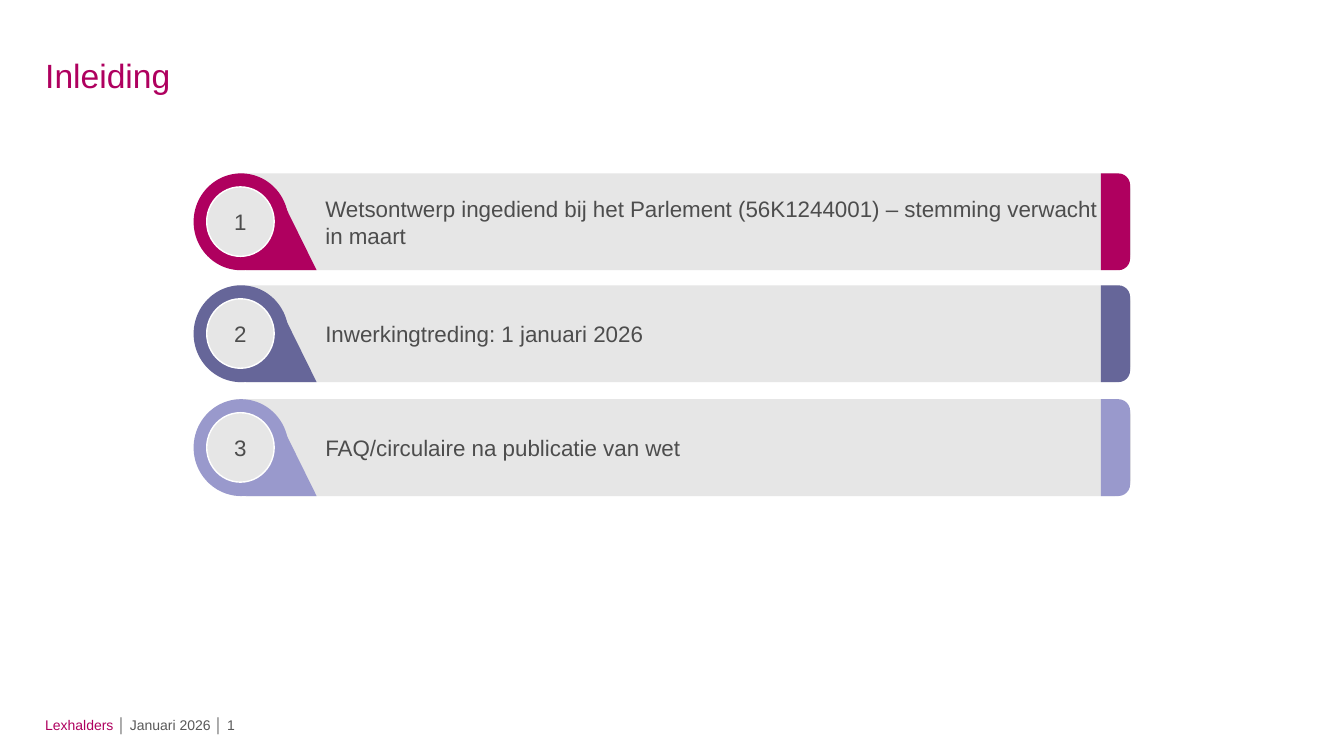
from pptx import Presentation
from pptx.dml.color import RGBColor
from pptx.enum.shapes import MSO_SHAPE
from pptx.enum.text import MSO_ANCHOR, PP_ALIGN
from pptx.util import Cm, Pt

BAR = MSO_SHAPE.ROUNDED_RECTANGLE
DISC = MSO_SHAPE.OVAL
TAIL = MSO_SHAPE.ISOSCELES_TRIANGLE
CAP = MSO_SHAPE.ROUND_2_SAME_RECTANGLE
MIDDLE = MSO_ANCHOR.MIDDLE
LEFT, CENTER = PP_ALIGN.LEFT, PP_ALIGN.CENTER

MAGENTA = RGBColor(0xAF, 0x00, 0x5F)
INDIGO = RGBColor(0x66, 0x66, 0x99)
LAVENDER = RGBColor(0x99, 0x99, 0xCC)
LIGHT_GREY = RGBColor(0xE6, 0xE6, 0xE6)
DARK_GREY = RGBColor(0x4D, 0x4D, 0x4D)
FOOTER_GREY = RGBColor(0x59, 0x59, 0x59)
WHITE = RGBColor(0xFF, 0xFF, 0xFF)

# Content
TITLE = "Inleiding"
FOOTER = [("Lexhalders ", MAGENTA), ("│ Januari 2026 │ 1", FOOTER_GREY)]
# Text, accent colour, top in cm
POINTS = [
    ("Wetsontwerp ingediend bij het Parlement (56K1244001) – stemming verwacht in maart",
     MAGENTA, 4.37),
    ("Inwerkingtreding: 1 januari 2026", INDIGO, 7.19),
    ("FAQ/circulaire na publicatie van wet", LAVENDER, 10.06),
]

# Layout in cm
MARGIN = 1.14
ROW_HEIGHT = 2.44
CAP_WIDTH = 0.74
CAP_CENTER = 28.11

presentation = Presentation()
presentation.slide_width, presentation.slide_height = Cm(33.87), Cm(19.05)
slide = presentation.slides.add_slide(presentation.slide_layouts[6])


def set_insets(frame, left, top, right, bottom):
    frame.margin_left, frame.margin_top = Cm(left), Cm(top)
    frame.margin_right, frame.margin_bottom = Cm(right), Cm(bottom)
    frame.vertical_anchor = MIDDLE


def write(paragraph, pieces, size):
    for text, color in pieces:
        run = paragraph.add_run()
        run.text = text
        run.font.name, run.font.size = "Arial", Pt(size)
        run.font.color.rgb = color


def add_text(left, top, width, height, pieces, size, bottom_inset, wrap):
    box = slide.shapes.add_textbox(Cm(left), Cm(top), Cm(width), Cm(height))
    box.text_frame.word_wrap = wrap
    set_insets(box.text_frame, 0, 0.13, 0.25, bottom_inset)
    write(box.text_frame.paragraphs[0], pieces, size)


def add_part(kind, left, top, width, height, fill):
    part = slide.shapes.add_shape(kind, Cm(left), Cm(top), Cm(width), Cm(height))
    part.shadow.inherit = False
    part.fill.solid()
    part.fill.fore_color.rgb = fill
    part.line.fill.background()
    return part


def label(part, text, align):
    paragraph = part.text_frame.paragraphs[0]
    paragraph.alignment = align
    write(paragraph, [(text, DARK_GREY)], 16)


# Footer and title
add_text(MARGIN, 17.91, 8.61, 0.56, FOOTER, 10, 0, False)
add_text(MARGIN, 1.04, 31.6, 1.68, [(TITLE, MAGENTA)], 24, 0.13, True)

# Numbered bars
for number, (text, accent, top) in enumerate(POINTS, start=1):
    bar = add_part(BAR, 5.59, top, 22.91, ROW_HEIGHT, LIGHT_GREY)
    set_insets(bar.text_frame, 2.49, 0.13, 0.25, 0.13)
    label(bar, text, LEFT)

    add_part(DISC, 4.88, top, 2.39, ROW_HEIGHT, accent)
    tail = add_part(TAIL, 6.2, top + 0.87, 1.78, 1.57, accent)
    tail.adjustments[0] = 0.565

    badge = add_part(DISC, 5.21, top + 0.34, 1.7, 1.75, LIGHT_GREY)
    badge.line.color.rgb = WHITE
    badge.line.width = Pt(1)
    set_insets(badge.text_frame, 0, 0, 0, 0)
    label(badge, str(number), CENTER)

    # The cap is turned a quarter, so its width spans the row height
    cap = add_part(CAP, CAP_CENTER - ROW_HEIGHT / 2, top + (ROW_HEIGHT - CAP_WIDTH) / 2,
                   ROW_HEIGHT, CAP_WIDTH, accent)
    cap.adjustments[0], cap.adjustments[1] = 0.4, 0
    cap.rotation = 90

presentation.save("out.pptx")
